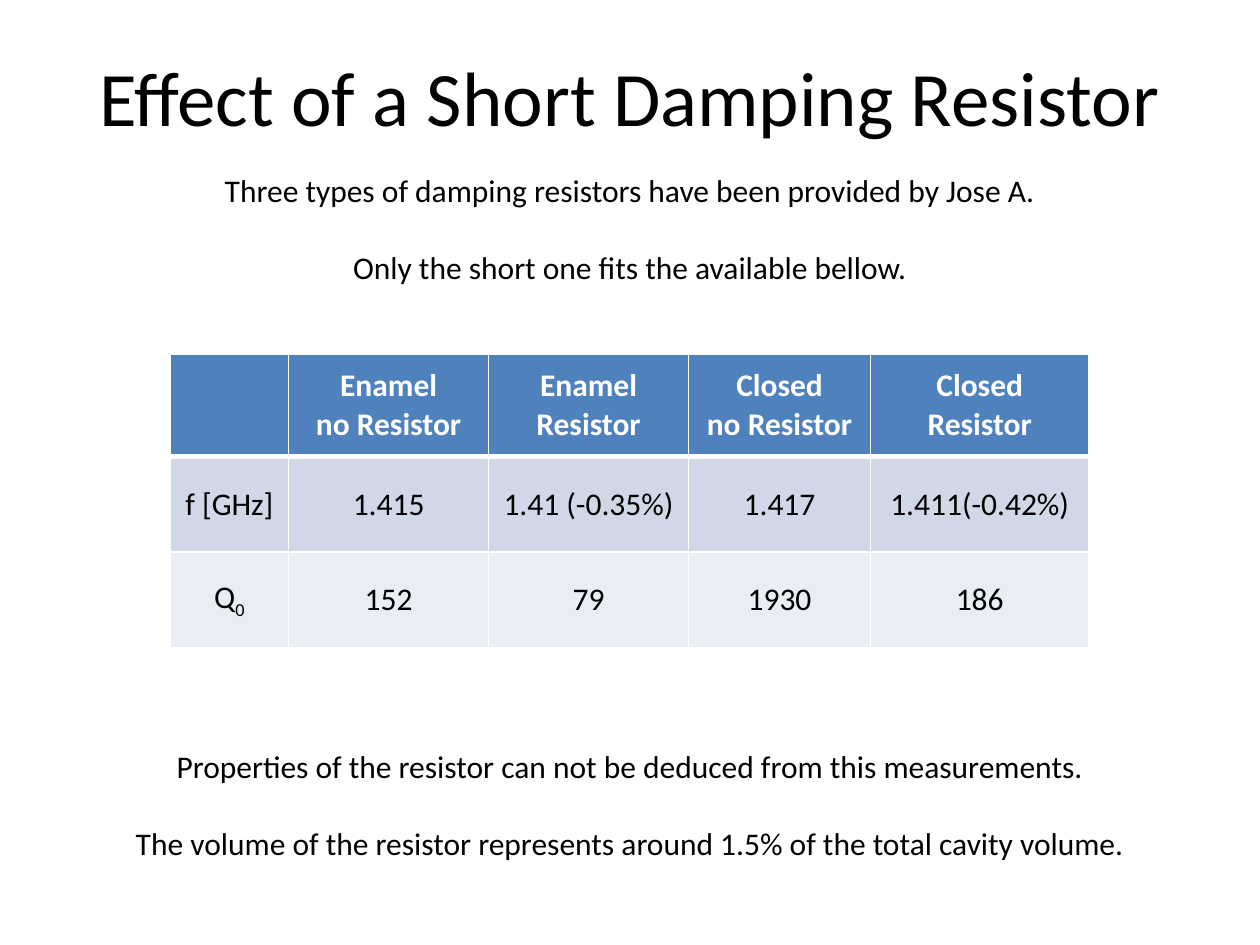
from lxml.etree import SubElement
from pptx import Presentation
from pptx.dml.color import RGBColor
from pptx.enum.text import MSO_ANCHOR, PP_ALIGN
from pptx.oxml import parse_xml
from pptx.oxml.ns import nsdecls, qn
from pptx.util import Cm, Pt

TITLE = ["Effect of a Short Damping Resistor"]
INTRODUCTION = [
    "Three types of damping resistors have been provided by Jose A.",
    "Only the short one fits the available bellow.",
]
CONCLUSION = [
    "Properties of the resistor can not be deduced from this measurements.",
    "The volume of the resistor represents around 1.5% of the total cavity volume.",
]
MEASUREMENTS = [
    ["", "Enamel\nno Resistor", "Enamel\nResistor", "Closed\nno Resistor", "Closed\nResistor"],
    ["f [GHz]", "1.415", "1.41 (-0.35%)", "1.417", "1.411(-0.42%)"],
    ["Q_0", "152", "79", "1930", "186"],
]
COLUMN_WIDTHS = [2.39, 4.03, 4.03, 3.67, 4.4]
ROW_HEIGHTS = [2.06, 1.93, 1.93]
ROW_FILLS = ["4F81BD", "D0D8E8", "E9EDF4"]
TABLE_LEFT, TABLE_TOP = 3.43, 7.14
PAGE_WIDTH, PAGE_HEIGHT = 25.4, 19.05

TITLE_FONT = {"name": "Calibri", "size": Pt(44), "bold": False}
BODY_FONT = {"name": "Calibri", "size": Pt(18), "bold": False}
HEADER_FONT = {**BODY_FONT, "bold": True}
BLACK, WHITE = "000000", "FFFFFF"
THIN, THICK = 1, 3


def color(value):
    return RGBColor.from_string(value)


def add_span(para, text, font, shade):
    span = para.add_run()
    span.text = text
    for name, value in font.items():
        setattr(span.font, name, value)
    span.font.color.rgb = color(shade)
    return span


def write(frame, lines, font, shade, gap=0):
    for index, line in enumerate(lines):
        para = frame.add_paragraph() if index else frame.paragraphs[0]
        para.alignment = PP_ALIGN.CENTER
        para.space_before = Pt(gap if index else 0)
        base, _, subscript = line.partition("_")
        if base:
            add_span(para, base, font, shade)
        if subscript:
            span = add_span(para, subscript, font, shade)
            span._r.get_or_add_rPr().set("baseline", "-25000")


def add_text(page, top, height, lines, font, gap=0, anchor=MSO_ANCHOR.TOP):
    box = page.shapes.add_textbox(Cm(0), Cm(top), Cm(PAGE_WIDTH), Cm(height))
    frame = box.text_frame
    frame.word_wrap = True
    frame.vertical_anchor = anchor
    write(frame, lines, font, BLACK, gap)


def set_borders(cell, widths):
    properties = cell._tc.get_or_add_tcPr()
    for index, (side, width) in enumerate(widths.items()):
        line = parse_xml(f'<a:ln{side} {nsdecls("a")} w="{Pt(width)}"/>')
        fill = SubElement(line, qn("a:solidFill"))
        SubElement(fill, qn("a:srgbClr"), val=WHITE)
        properties.insert(index, line)


def add_measurements(page):
    table = page.shapes.add_table(
        len(ROW_HEIGHTS), len(COLUMN_WIDTHS), Cm(TABLE_LEFT), Cm(TABLE_TOP),
        Cm(sum(COLUMN_WIDTHS)), Cm(sum(ROW_HEIGHTS)),
    ).table
    for column, width in zip(table.columns, COLUMN_WIDTHS):
        column.width = Cm(width)
    for row, height in zip(table.rows, ROW_HEIGHTS):
        row.height = Cm(height)
    for row_index, values in enumerate(MEASUREMENTS):
        header = row_index == 0
        font, shade = (HEADER_FONT, WHITE) if header else (BODY_FONT, BLACK)
        top = THICK if row_index == 1 else THIN
        bottom = THICK if header else THIN
        for column_index, value in enumerate(values):
            cell = table.cell(row_index, column_index)
            cell.vertical_anchor = MSO_ANCHOR.MIDDLE
            cell.fill.solid()
            cell.fill.fore_color.rgb = color(ROW_FILLS[row_index])
            write(cell.text_frame, value.split("\n"), font, shade)
            set_borders(cell, {"L": THIN, "R": THIN, "T": top, "B": bottom})


def main():
    deck = Presentation()
    deck.slide_width, deck.slide_height = Cm(PAGE_WIDTH), Cm(PAGE_HEIGHT)
    page = deck.slides.add_slide(deck.slide_layouts[6])
    add_text(page, 0.33, 3.18, TITLE, TITLE_FONT, anchor=MSO_ANCHOR.MIDDLE)
    add_measurements(page)
    add_text(page, 14.94, 2.57, CONCLUSION, BODY_FONT, gap=22)
    add_text(page, 3.33, 2.57, INTRODUCTION, BODY_FONT, gap=22)
    deck.save("out.pptx")


if __name__ == "__main__":
    main()
